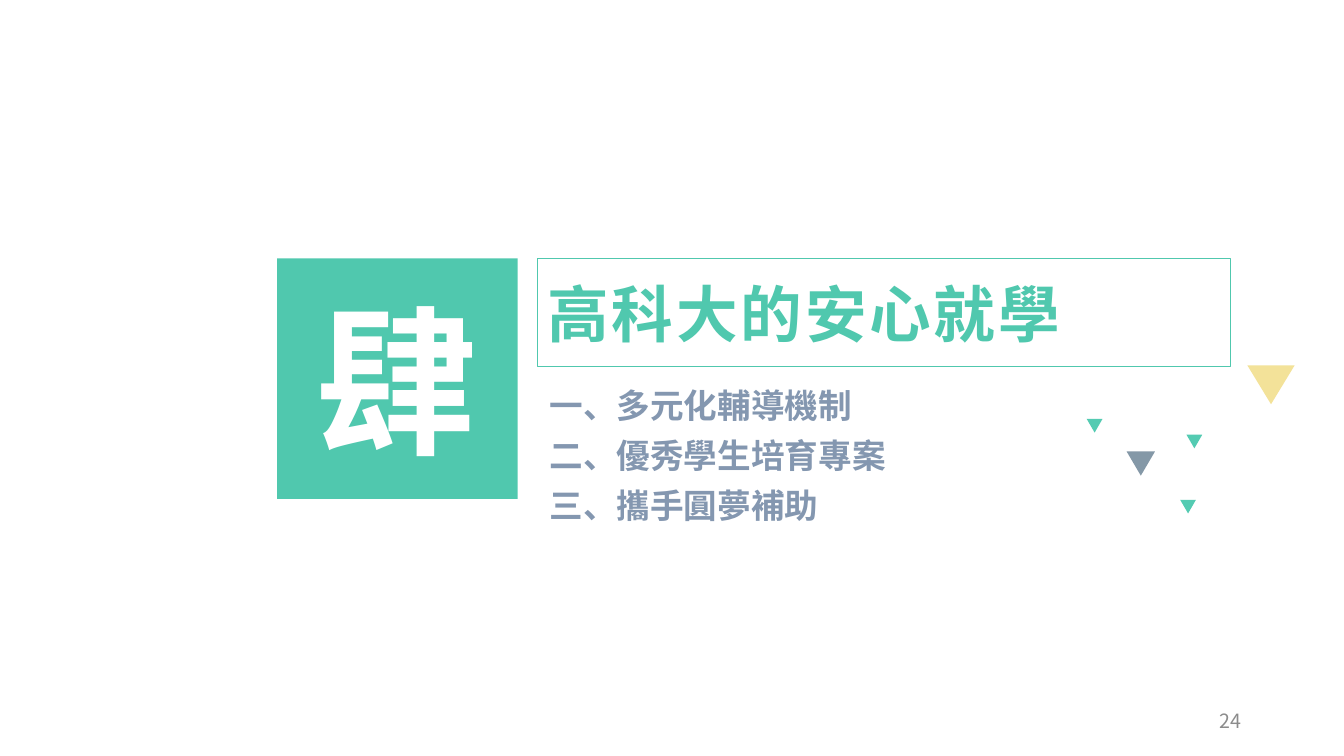
"""Section slide: a numbered square, a framed title, three topics and loose triangles."""
from lxml.etree import SubElement
from pptx import Presentation
from pptx.dml.color import RGBColor as Rgb
from pptx.enum.shapes import MSO_SHAPE as Kind
from pptx.enum.text import MSO_ANCHOR as Anchor, PP_ALIGN as Align
from pptx.oxml.ns import qn
from pptx.util import Pt

PX = 9525
HUES = {"teal": "50C8AE", "white": "FFFFFF", "slate": "8497B0", "gray": "8C8C8C",
        "gold": "EED66F", "green": "0CB692", "steel": "516D82"}
NOTO = "Noto Sans CJK SC"


def add(kind, *box):
    item = slide.shapes.add_shape(kind, *(n * PX for n in box))
    item.shadow.inherit = False
    item.fill.background()
    item.line.fill.background()
    return item


def write(frame, lines, hue, align, space=0, **style):
    frame.word_wrap = True
    for i, line in enumerate(lines):
        para = frame.paragraphs[0] if i == 0 else frame.add_paragraph()
        para.alignment = align
        para.space_before = Pt(space if i else 0)
        para.space_after = Pt(space)
        run = para.add_run()
        run.text = line
        run.font.color.rgb = Rgb.from_string(HUES[hue])
        for key, value in style.items():
            setattr(run.font, key, value)
        SubElement(run.font._element, qn("a:ea"), typeface=style["name"])


deck = Presentation()
deck.slide_width, deck.slide_height = 1280 * PX, 720 * PX
slide = deck.slides.add_slide(deck.slide_layouts[6])

page = slide.shapes.add_textbox(*(n * PX for n in (904, 667, 288, 38))).text_frame
page.vertical_anchor = Anchor.MIDDLE
write(page, ["24"], "gray", Align.RIGHT, size=Pt(14), name=NOTO)

badge = add(Kind.ROUNDED_RECTANGLE, 264, 246, 229, 229)
badge.adjustments[0] = 0
badge.fill.solid()
badge.fill.fore_color.rgb = Rgb.from_string(HUES["teal"])
frame = badge.text_frame
for side in ("left", "right", "top", "bottom"):
    setattr(frame, f"margin_{side}", 0)
write(frame, ["肆"], "white", Align.CENTER, size=Pt(115), bold=True, name="Roboto Condensed")

title = add(Kind.ROUNDED_RECTANGLE, 512, 246, 660, 103)
title.adjustments[0] = 0
title.line.color.rgb = Rgb.from_string(HUES["teal"])
title.line.width = Pt(1)
write(title.text_frame, ["高科大的安心就學"], "teal", Align.JUSTIFY,
      size=Pt(44), bold=True, name=NOTO)
title.text_frame.paragraphs[0].runs[0].font._element.set("spc", "200")

for hue, *box in (
    ("gold", 1188, 348, 45, 37),
    ("green", 1035, 399, 15, 13),
    ("green", 1124, 476, 15, 13),
    ("green", 1130, 414, 15, 13),
    ("steel", 1073, 430, 27, 23),
):
    mark = add(Kind.ISOSCELES_TRIANGLE, *box)
    mark.rotation = 180
    mark.fill.solid()
    mark.fill.fore_color.rgb = Rgb.from_string(HUES[hue])
    color = mark.fill._xPr.find(".//" + qn("a:srgbClr"))
    SubElement(color, qn("a:alpha"), val="70000")

topics = slide.shapes.add_textbox(*(n * PX for n in (514, 368, 588, 158))).text_frame
write(topics, ["一、多元化輔導機制", "二、優秀學生培育專案", "三、攜手圓夢補助"],
      "slate", Align.LEFT, space=6, size=Pt(24), bold=True, name=NOTO)
for para in topics.paragraphs:
    para.line_spacing = 0.83

deck.save("out.pptx")
